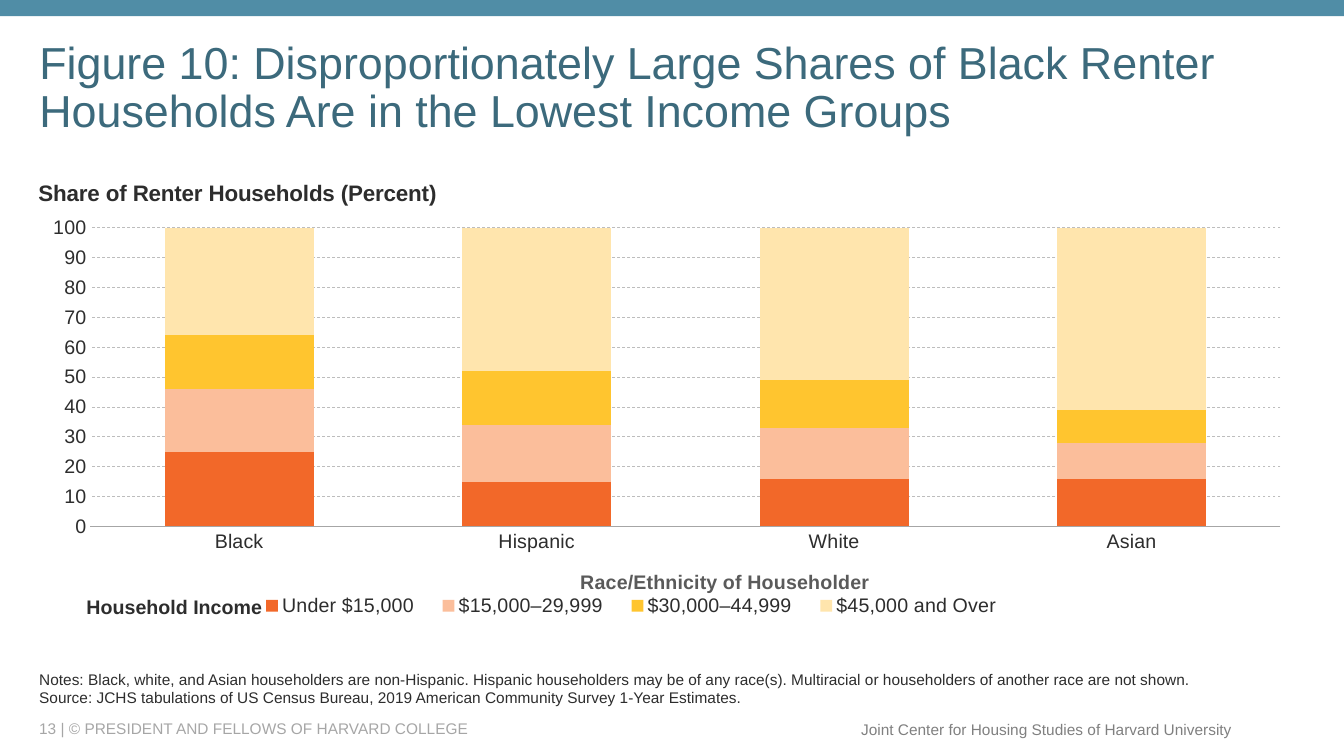
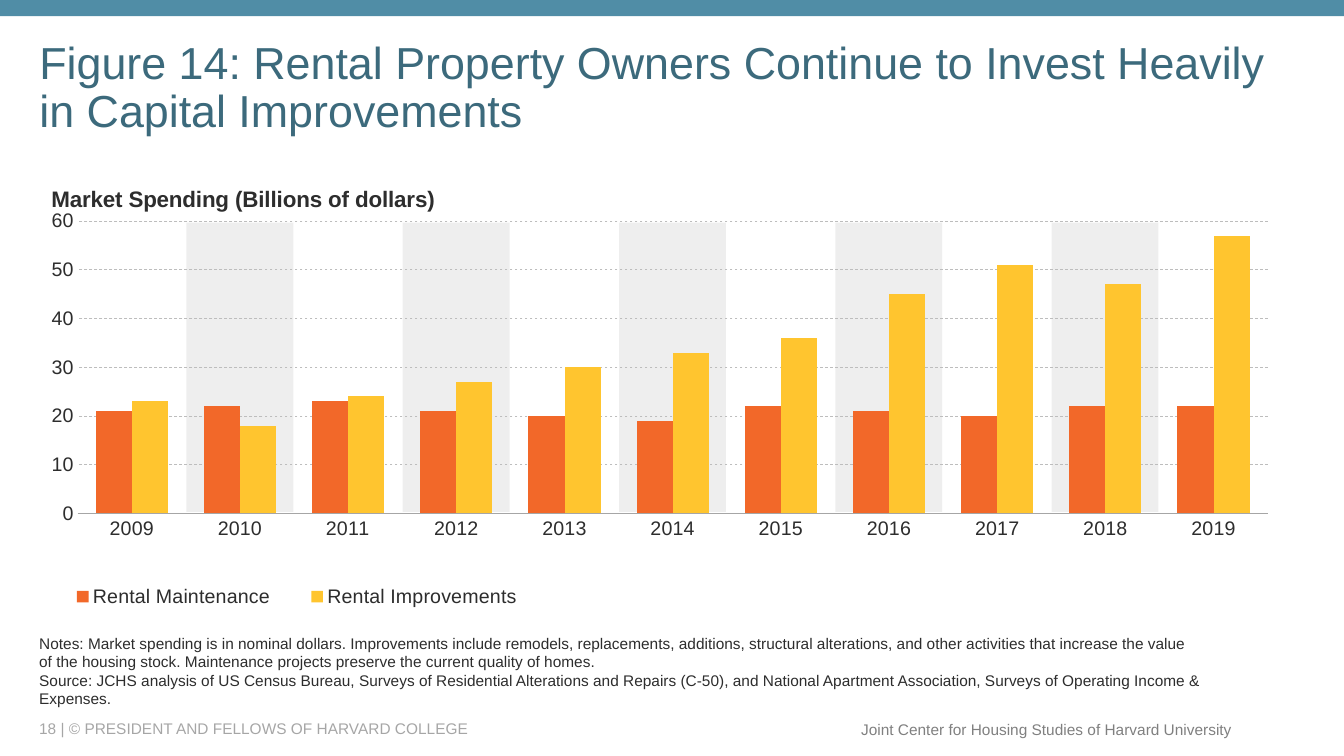
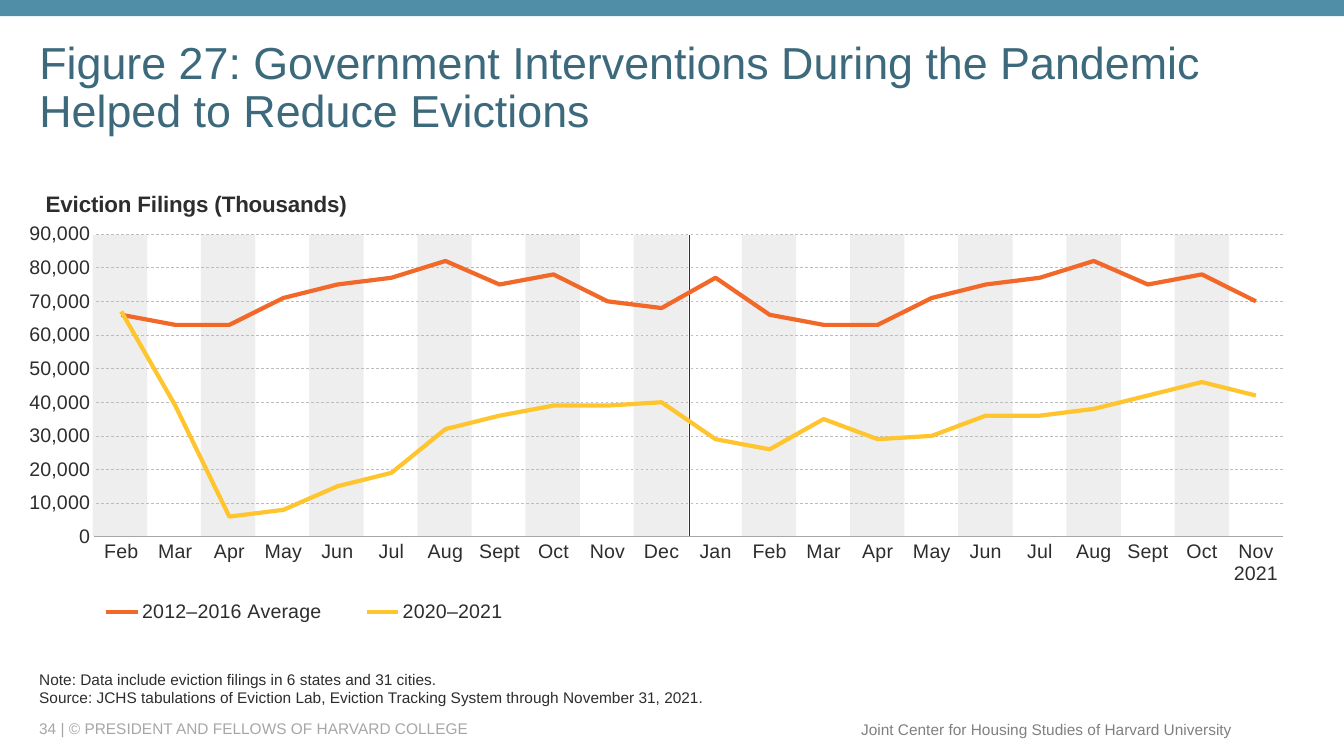
"""Build three rental housing chart slides with a shared band, title style and footers."""
from lxml.etree import Element, SubElement
from pptx import Presentation
from pptx.chart.data import CategoryChartData
from pptx.dml.color import RGBColor
from pptx.enum.chart import XL_CHART_TYPE as ChartType, XL_LEGEND_POSITION as LegendPosition
from pptx.enum.chart import XL_TICK_MARK as TickMark
from pptx.enum.dml import MSO_LINE
from pptx.enum.shapes import MSO_CONNECTOR, MSO_SHAPE
from pptx.enum.text import MSO_ANCHOR as Anchor, MSO_AUTO_SIZE as AutoSize, PP_ALIGN as Align
from pptx.oxml.ns import qn
from pptx.util import Inches, Pt

FONT = "Arial"
TEAL, TITLE, TEXT, GRAY = "508DA6", "3C6A7C", "2D2D2D", "5A5A5A"
FOOTER_LEFT, FOOTER_RIGHT = "A6A6A6", "808080"
AXIS, GRID, STRIPE, DIVIDER = "A6A6A6", "BDBDBD", "DEDEDE", "43273A"
ORANGE, PEACH, GOLD, CREAM = "F26829", "FBBE9B", "FFC52F", "FFE5AD"
LEFT, WIDTH = 0.29, 12.65

MONTHS = ["Feb", "Mar", "Apr", "May", "Jun", "Jul", "Aug", "Sept", "Oct", "Nov", "Dec"]

FIGURES = [
    {
        "number": 13,
        "title": "Figure 10: Disproportionately Large Shares of Black Renter "
                 "Households Are in the Lowest Income Groups",
        "kind": ChartType.COLUMN_STACKED,
        "top": 1.63, "height": 4.6,
        "plot": (0.048, 0.137, 0.933, 0.644),
        "heading": "Share of Renter Households (Percent)",
        "heading_at": (0.34, 1.73),
        "legend_at": (2.42, 5.84, 7.68, 0.34),
        "maximum": 100, "step": 10,
        "categories": ["Black", "Hispanic", "White", "Asian"],
        "series": [
            ("Under $15,000", ORANGE, [25, 15, 16, 16]),
            ("$15,000–29,999", PEACH, [21, 19, 17, 12]),
            ("$30,000–44,999", GOLD, [18, 18, 16, 11]),
            ("$45,000 and Over", CREAM, [36, 48, 51, 62]),
        ],
        "stripes": None,
        "notes_at": (6.48, 0.58),
        "notes": [
            "Notes: Black, white, and Asian householders are non-Hispanic. Hispanic householders "
            "may be of any race(s). Multiracial or householders of another race are not shown.",
            "Source: JCHS tabulations of US Census Bureau, 2019 American Community Survey "
            "1-Year Estimates.",
        ],
    },
    {
        "number": 18,
        "title": "Figure 14: Rental Property Owners Continue to Invest Heavily "
                 "in Capital Improvements",
        "kind": ChartType.COLUMN_CLUSTERED,
        "top": 1.68, "height": 4.43,
        "plot": (0.038, 0.116, 0.933, 0.655),
        "heading": "Market Spending (Billions of dollars)",
        "heading_at": (0.47, 1.79),
        "legend_at": (0.42, 5.75, 5.05, 0.34),
        "maximum": 60, "step": 10,
        "categories": [str(year) for year in range(2009, 2020)],
        "series": [
            ("Rental Maintenance", ORANGE, [21, 22, 23, 21, 20, 19, 22, 21, 20, 22, 22]),
            ("Rental Improvements", GOLD, [23, 18, 24, 27, 30, 33, 36, 45, 51, 47, 57]),
        ],
        "stripes": {"count": 5, "left": 1.85, "pitch": 2.145, "width": 1.06,
                    "top": 2.21, "height": 2.87},
        "notes_at": (6.23, 0.84),
        "notes": [
            "Notes: Market spending is in nominal dollars. Improvements include remodels, "
            "replacements, additions, structural alterations, and other activities that increase "
            "the value of the housing stock. Maintenance projects preserve the current quality "
            "of homes.",
            "Source: JCHS analysis of US Census Bureau, Surveys of Residential Alterations and "
            "Repairs (C-50), and National Apartment Association, Surveys of Operating Income & "
            "Expenses.",
        ],
    },
    {
        "number": 34,
        "title": "Figure 27: Government Interventions During the Pandemic "
                 "Helped to Reduce Evictions",
        "kind": ChartType.LINE,
        "top": 1.72, "height": 4.6,
        "plot": (0.05, 0.131, 0.933, 0.653),
        "heading": "Eviction Filings (Thousands)",
        "heading_at": (0.4, 1.84),
        "legend_at": (0.66, 5.9, 4.7, 0.34),
        "maximum": 90000, "step": 10000,
        "categories": MONTHS + ["Jan"] + MONTHS[:-2] + ["Nov 2021"],
        "series": [
            ("2012–2016 Average", ORANGE,
             [66000, 63000, 63000, 71000, 75000, 77000, 82000, 75000, 78000, 70000, 68000,
              77000, 66000, 63000, 63000, 71000, 75000, 77000, 82000, 75000, 78000, 70000]),
            ("2020–2021", GOLD,
             [67000, 39000, 6000, 8000, 15000, 19000, 32000, 36000, 39000, 39000, 40000,
              29000, 26000, 35000, 29000, 30000, 36000, 36000, 38000, 42000, 46000, 42000]),
        ],
        "stripes": {"count": 11, "left": 0.92, "pitch": 1.073, "width": 0.54,
                    "top": 2.33, "height": 2.99},
        "notes_at": (6.48, 0.58),
        "notes": [
            "Note: Data include eviction filings in 6 states and 31 cities.",
            "Source: JCHS tabulations of Eviction Lab, Eviction Tracking System through "
            "November 31, 2021.",
        ],
    },
]


def style(font, size, color, bold=False):
    """Set the typeface, size, colour and weight of a font."""
    font.name, font.size, font.bold = FONT, Pt(size), bold
    font.color.rgb = RGBColor.from_string(color)


def place(element, index, fractions):
    """Give a chart part a manual layout in fractions of the chart."""
    for old in element.findall(qn("c:layout")):
        element.remove(old)
    layout = Element(qn("c:layout"))
    manual = SubElement(layout, qn("c:manualLayout"))
    if index == 0:
        SubElement(manual, qn("c:layoutTarget")).set("val", "inner")
    for mode in ("xMode", "yMode"):
        SubElement(manual, qn(f"c:{mode}")).set("val", "edge")
    for side, fraction in zip("xywh", fractions):
        SubElement(manual, qn(f"c:{side}")).set("val", f"{fraction:.4f}")
    element.insert(index, layout)


deck = Presentation()
deck.slide_width, deck.slide_height = Inches(13.33), Inches(7.5)

for figure in FIGURES:
    page = deck.slides.add_slide(deck.slide_layouts[5])
    shapes = page.shapes
    top, height = figure["top"], figure["height"]

    rectangles = [(0, 0, 13.33, 0.16, TEAL)]
    stripes = figure["stripes"]
    if stripes:
        rectangles += [
            (stripes["left"] + number * stripes["pitch"], stripes["top"],
             stripes["width"], stripes["height"], STRIPE)
            for number in range(stripes["count"])
        ]
    for *bounds, color in rectangles:
        band = shapes.add_shape(MSO_SHAPE.RECTANGLE, *map(Inches, bounds))
        band.shadow.inherit = False
        band.fill.solid()
        band.fill.fore_color.rgb = RGBColor.from_string(color)
        band.line.fill.background()
        if color == STRIPE:
            tint = band.element.spPr.find(".//" + qn("a:srgbClr"))
            SubElement(tint, qn("a:alpha")).set("val", "50000")

    if figure["kind"] == ChartType.LINE:
        divider = shapes.add_connector(
            MSO_CONNECTOR.STRAIGHT, Inches(6.84), Inches(5.32), Inches(6.84), Inches(2.33))
        divider.line.color.rgb = RGBColor.from_string(DIVIDER)
        divider.line.width = Pt(1.25)
        SubElement(divider.element.spPr, qn("a:effectLst"))

    title = shapes.title
    title.left, title.top = Inches(LEFT), Inches(0.4)
    title.width, title.height = Inches(WIDTH), Inches(0.97)
    title.text_frame.text = figure["title"]
    title.text_frame.auto_size = AutoSize.NONE
    title.text_frame.vertical_anchor = Anchor.MIDDLE
    para = title.text_frame.paragraphs[0]
    para.alignment, para.line_spacing = Align.LEFT, 0.9
    style(para.font, 32, TITLE)

    data = CategoryChartData()
    data.categories = figure["categories"]
    for name, color, values in figure["series"]:
        data.add_series(name, values)
    chart = shapes.add_chart(
        figure["kind"], Inches(LEFT), Inches(top), Inches(WIDTH), Inches(height), data).chart
    style(chart.font, 10, GRAY)
    plot = chart.plots[0]
    plot.vary_by_categories = False
    if figure["kind"] != ChartType.LINE:
        plot.gap_width = 100
        plot.overlap = 100 if figure["kind"] == ChartType.COLUMN_STACKED else 0
    for series, (name, color, values) in zip(plot.series, figure["series"]):
        if figure["kind"] == ChartType.LINE:
            series.smooth = False
            series.format.line.width = Pt(3)
            series.format.line.color.rgb = RGBColor.from_string(color)
        else:
            series.format.fill.solid()
            series.format.fill.fore_color.rgb = RGBColor.from_string(color)

    category_axis, value_axis = chart.category_axis, chart.value_axis
    for axis in (category_axis, value_axis):
        axis.major_tick_mark = axis.minor_tick_mark = TickMark.NONE
        style(axis.tick_labels.font, 14, TEXT)
    category_axis.format.line.color.rgb = RGBColor.from_string(AXIS)
    category_axis.format.line.width = Pt(0.5)
    value_axis.format.line.fill.background()
    value_axis.minimum_scale, value_axis.maximum_scale = 0, figure["maximum"]
    value_axis.major_unit = figure["step"]
    value_axis.tick_labels.number_format = "#,##0"
    value_axis.tick_labels.number_format_is_linked = False
    grid = value_axis.major_gridlines.format.line
    grid.color.rgb = RGBColor.from_string(GRID)
    grid.width, grid.dash_style = Pt(0.5), MSO_LINE.DASH

    headings = [(chart, figure["heading"], figure["heading_at"], 16, TEXT)]
    if figure["kind"] == ChartType.COLUMN_STACKED:
        headings.append((category_axis, "Race/Ethnicity of Householder", (5.72, 5.61), 14, GRAY))
    for owner, text, (x, y), size, color in headings:
        heading = owner.chart_title if owner is chart else owner.axis_title
        heading.text_frame.text = text
        style(heading.text_frame.paragraphs[0].font, size, color, bold=True)
        place(heading._element, 1, ((x - LEFT) / WIDTH, (y - top) / height))

    chart.has_legend = True
    legend = chart.legend
    legend.position = LegendPosition.BOTTOM
    legend.include_in_layout = False
    style(legend.font, 14, TEXT)
    x, y, w, h = figure["legend_at"]
    place(legend._element, 1, ((x - LEFT) / WIDTH, (y - top) / height, w / WIDTH, h / height))
    place(plot._element.getparent(), 0, figure["plot"])

    notes_top, notes_height = figure["notes_at"]
    captions = [
        ((LEFT, notes_top, 11.75, notes_height), figure["notes"],
         11, TEXT, Anchor.BOTTOM, Align.LEFT),
        ((LEFT, 7.13, 7.92, 0.2),
         [f"{figure['number']} | © PRESIDENT AND FELLOWS OF HARVARD COLLEGE"],
         11, FOOTER_LEFT, Anchor.MIDDLE, Align.LEFT),
        ((8.42, 7.09, 3.9, 0.29), ["Joint Center for Housing Studies of Harvard University"],
         11, FOOTER_RIGHT, Anchor.MIDDLE, Align.RIGHT),
    ]
    if figure["kind"] == ChartType.COLUMN_STACKED:
        captions.append(((0.76, 5.85, 2.23, 0.34), ["Household Income"],
                         14, TEXT, Anchor.TOP, Align.LEFT))
    for bounds, lines, size, color, anchor, alignment in captions:
        box = shapes.add_textbox(*map(Inches, bounds))
        frame = box.text_frame
        frame.word_wrap = True
        frame.vertical_anchor = anchor
        frame.text = "\n".join(lines)
        for para in frame.paragraphs:
            para.alignment = alignment
            style(para.font, size, color, bold=size == 14)

deck.save("out.pptx")
